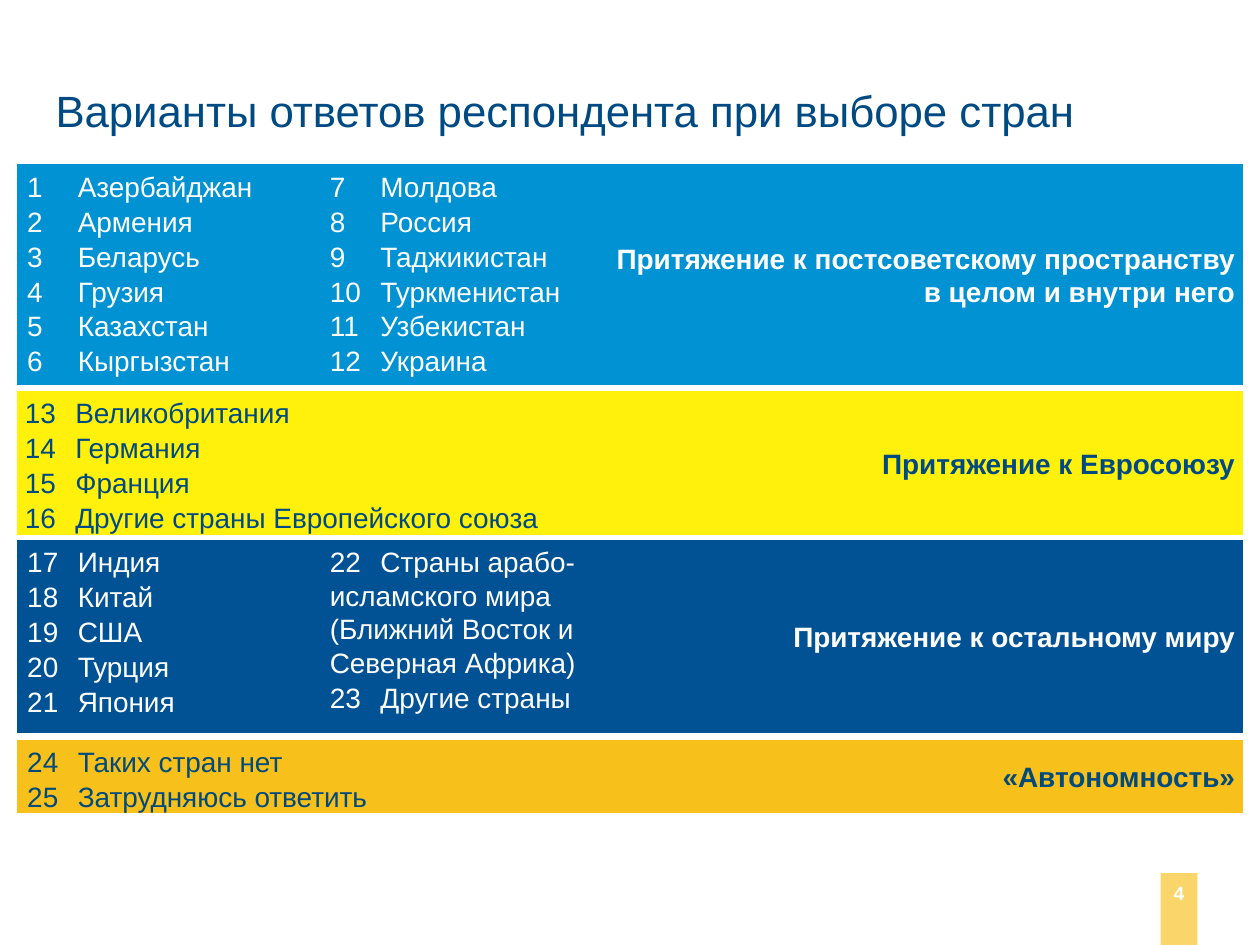
from dataclasses import dataclass

from lxml.etree import SubElement
from pptx import Presentation
from pptx.dml.color import RGBColor
from pptx.enum.shapes import MSO_SHAPE
from pptx.enum.text import MSO_ANCHOR, PP_ALIGN
from pptx.oxml.ns import qn
from pptx.util import Cm, Pt


@dataclass(frozen=True)
class Theme:
    font: str = "Arial"
    title_size: int = 25
    body_size: int = 16
    number_size: int = 11
    white: str = "FFFFFF"
    navy: str = "004A84"
    dark_teal: str = "004A7C"
    sky: str = "0092D2"
    yellow: str = "FFF10B"
    blue: str = "005294"
    amber: str = "F8C01B"


class SlideBuilder:
    """Holds the theme and the current slide."""

    def __init__(self, slide, theme):
        self.slide = slide
        self.theme = theme

    def format_text(self, paragraph, size, color, bold=False):
        for run in paragraph.runs:
            run.font.name = self.theme.font
            run.font.size = Pt(size)
            run.font.bold = bold
            run.font.color.rgb = RGBColor.from_string(color)

    def rectangle(self, left, top, width, height, fill):
        shape = self.slide.shapes.add_shape(
            MSO_SHAPE.RECTANGLE, Cm(left), Cm(top), Cm(width), Cm(height))
        shape.shadow.inherit = False
        shape.fill.solid()
        shape.fill.fore_color.rgb = RGBColor.from_string(fill)
        shape.line.fill.background()
        return shape

    def text_box(self, left, top, width, height, inset_x=0.25, inset_y=0.13):
        box = self.slide.shapes.add_textbox(Cm(left), Cm(top), Cm(width), Cm(height))
        frame = box.text_frame
        frame.word_wrap = True
        frame.margin_left = frame.margin_right = Cm(inset_x)
        frame.margin_top = frame.margin_bottom = Cm(inset_y)
        return frame

    def title(self, text):
        frame = self.text_box(1.12, 1.68, 23.04, 2.18, 0, 0)
        frame.text = text
        self.format_text(frame.paragraphs[0], self.theme.title_size, self.theme.navy)

    def band(self, top, height, fill, color, label):
        shape = self.rectangle(0.3, top, 24.8, height, fill)
        shape.line.color.rgb = RGBColor.from_string(self.theme.white)
        shape.line.width = Pt(2)
        frame = shape.text_frame
        frame.word_wrap = True
        frame.vertical_anchor = MSO_ANCHOR.MIDDLE
        frame.margin_left = frame.margin_right = Cm(0.2)
        frame.margin_top = frame.margin_bottom = Cm(0.2)
        paragraph = frame.paragraphs[0]
        paragraph.text = label
        paragraph.alignment = PP_ALIGN.RIGHT
        self.format_text(paragraph, self.theme.body_size, color, bold=True)

    def numbered_list(self, top, height, color, first, names, columns, inset):
        frame = self.text_box(0.3, top, 12.7, height, inset)
        if columns > 1:
            frame._txBody.bodyPr.set("numCol", str(columns))
        for index, name in enumerate(names):
            paragraph = frame.paragraphs[0] if index == 0 else frame.add_paragraph()
            paragraph.text = f"{first + index}\t{name}"
            if index:
                paragraph.space_before = Pt(0.8)
            tabs = SubElement(paragraph._p.get_or_add_pPr(), qn("a:tabLst"))
            SubElement(tabs, qn("a:tab"), pos=str(Cm(1.02)), algn="l")
            self.format_text(paragraph, self.theme.body_size, color)

    def page_number(self, number):
        marker = self.rectangle(23.4, 17.6, 0.74, 1.45, self.theme.amber)
        fill_color = marker.fill._xPr.find(qn("a:solidFill"))[0]
        SubElement(fill_color, qn("a:alpha"), val="65000")
        frame = self.text_box(23.12, 17.63, 1.3, 0.74)
        paragraph = frame.paragraphs[0]
        paragraph.text = str(number)
        paragraph.alignment = PP_ALIGN.CENTER
        self.format_text(paragraph, self.theme.number_size, self.theme.white, bold=True)
        # Text shadow belongs directly after the run's fill
        properties = paragraph.runs[0].font._element
        effects = SubElement(properties, qn("a:effectLst"))
        properties.find(qn("a:solidFill")).addnext(effects)
        shadow = SubElement(effects, qn("a:outerShdw"), dist="17961", dir="2700000")
        SubElement(shadow, qn("a:srgbClr"), val="000000")


def main():
    theme = Theme()
    presentation = Presentation()
    presentation.slide_width = Cm(25.4)
    presentation.slide_height = Cm(19.05)
    slide = presentation.slides.add_slide(presentation.slide_layouts[6])
    builder = SlideBuilder(slide, theme)

    # Page number and title
    builder.page_number(4)
    builder.title("Варианты ответов респондента при выборе стран")

    # Bands: top, height, fill, text colour, label, columns, list inset, names
    groups = [
        (3.28, 4.52, theme.sky, theme.white,
         "Притяжение к постсоветскому пространству\vв целом и внутри него", 2, 0.25,
         ["Азербайджан", "Армения", "Беларусь", "Грузия", "Казахстан", "Кыргызстан",
          "Молдова", "Россия", "Таджикистан", "Туркменистан", "Узбекистан", "Украина"]),
        (7.85, 2.97, theme.yellow, theme.navy, "Притяжение к Евросоюзу", 1, 0.2,
         ["Великобритания", "Германия", "Франция", "Другие страны Европейского союза"]),
        (10.85, 3.96, theme.blue, theme.white, "Притяжение к остальному миру", 2, 0.25,
         ["Индия", "Китай", "США", "Турция", "Япония",
          "Страны арабо-исламского мира (Ближний Восток и Северная Африка)",
          "Другие страны"]),
        (14.88, 1.55, theme.amber, theme.dark_teal, "«Автономность»", 1, 0.25,
         ["Таких стран нет", "Затрудняюсь ответить"]),
    ]
    first = 1
    for top, height, fill, color, label, columns, inset, names in groups:
        builder.band(top, height, fill, color, label)
        builder.numbered_list(top, height, color, first, names, columns, inset)
        first += len(names)

    presentation.save("out.pptx")


if __name__ == "__main__":
    main()
